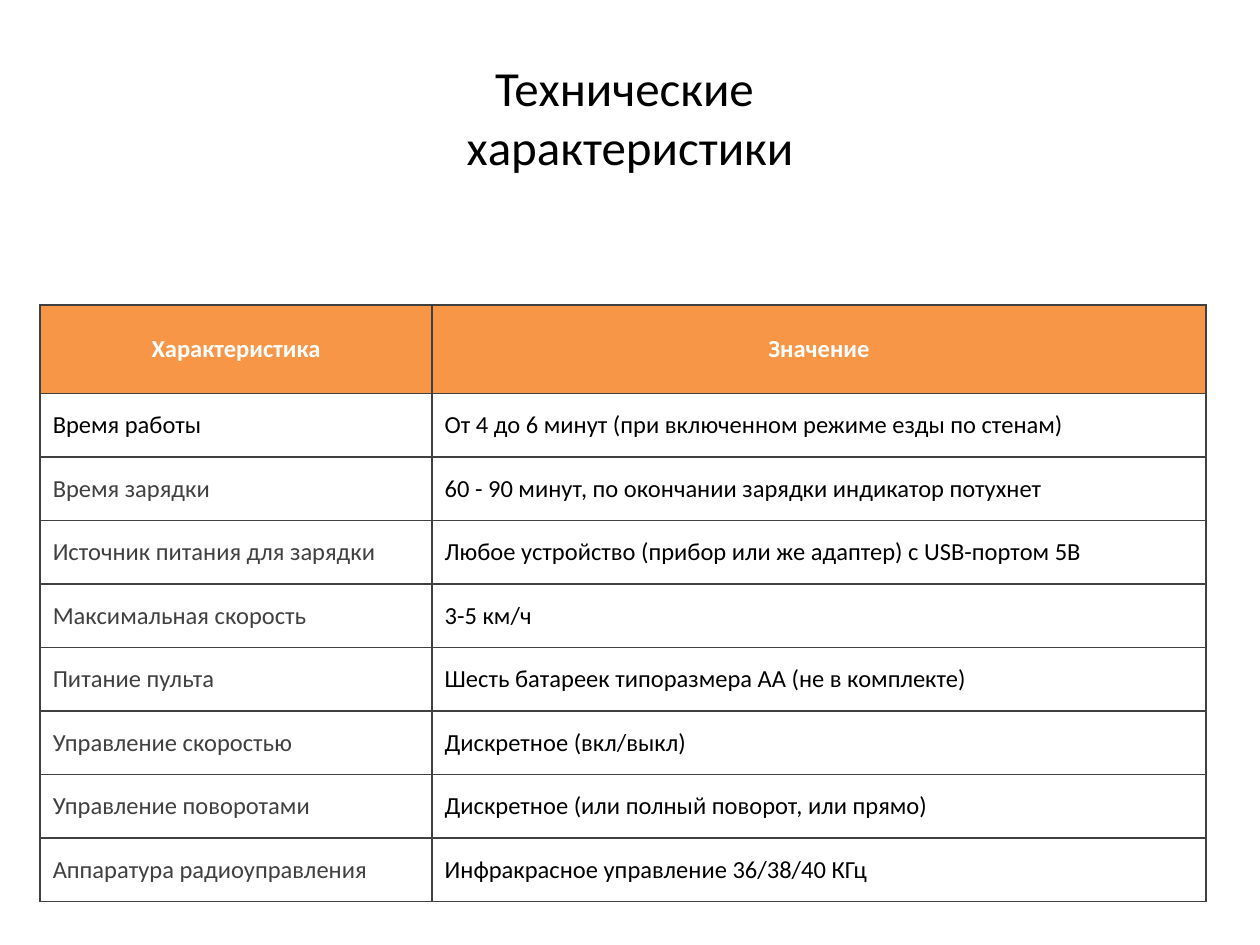
from dataclasses import dataclass

import lxml.etree
import pptx
import pptx.dml.color
import pptx.enum.text
import pptx.oxml.ns
import pptx.util

Cm = pptx.util.Cm
Pt = pptx.util.Pt
RGBColor = pptx.dml.color.RGBColor
PP_ALIGN = pptx.enum.text.PP_ALIGN
MSO_ANCHOR = pptx.enum.text.MSO_ANCHOR
qn = pptx.oxml.ns.qn

BLACK = RGBColor(0x00, 0x00, 0x00)
WHITE = RGBColor(0xFF, 0xFF, 0xFF)
GRAY = RGBColor(0x40, 0x40, 0x40)
ORANGE = RGBColor(0xF7, 0x96, 0x46)
FONT_NAME = "Calibri"
COLUMN_WIDTHS = (Cm(7.9), Cm(15.6))
HEADER_HEIGHT = Cm(1.78)
ROW_HEIGHT = Cm(1.28)


@dataclass(frozen=True)
class Specification:
    name: str
    value: str
    name_color: RGBColor = GRAY


@dataclass(frozen=True)
class CellStyle:
    fill: RGBColor
    color: RGBColor
    bold: bool = False
    alignment: PP_ALIGN = PP_ALIGN.LEFT


SPECIFICATIONS = (
    Specification("Время работы", "От 4 до 6 минут (при включенном режиме езды по стенам)", BLACK),
    Specification("Время зарядки", "60 - 90 минут, по окончании зарядки индикатор потухнет"),
    Specification("Источник питания для зарядки", "Любое устройство (прибор или же адаптер) с USB-портом 5В"),
    Specification("Максимальная скорость", "3-5 км/ч"),
    Specification("Питание пульта", "Шесть батареек типоразмера АА (не в комплекте)"),
    Specification("Управление скоростью", "Дискретное (вкл/выкл)"),
    Specification("Управление поворотами", "Дискретное (или полный поворот, или прямо)"),
    Specification("Аппаратура радиоуправления", "Инфракрасное управление 36/38/40 КГц"),
)
HEADER_STYLE = CellStyle(ORANGE, WHITE, True, PP_ALIGN.CENTER)


def style_paragraph(paragraph, size: int, style: CellStyle) -> None:
    paragraph.alignment = style.alignment
    font = paragraph.font
    font.name = FONT_NAME
    font.size = Pt(size)
    font.bold = style.bold
    font.color.rgb = style.color


def add_borders(cell) -> None:
    properties = cell._tc.get_or_add_tcPr()
    for index, side in enumerate(("lnL", "lnR", "lnT", "lnB")):
        line = lxml.etree.Element(qn(f"a:{side}"), w=str(Pt(1)))
        fill = lxml.etree.SubElement(line, qn("a:solidFill"))
        lxml.etree.SubElement(fill, qn("a:srgbClr"), val=str(GRAY))
        properties.insert(index, line)


def fill_cell(cell, text: str, style: CellStyle) -> None:
    cell.text = text
    cell.vertical_anchor = MSO_ANCHOR.MIDDLE
    cell.fill.solid()
    cell.fill.fore_color.rgb = style.fill
    style_paragraph(cell.text_frame.paragraphs[0], 14, style)
    add_borders(cell)


def add_title(slide) -> None:
    shape = slide.shapes.add_textbox(Cm(1.27), Cm(0.76), Cm(22.86), Cm(3.18))
    frame = shape.text_frame
    frame.word_wrap = True
    frame.vertical_anchor = MSO_ANCHOR.MIDDLE
    frame.text = "Технические \vхарактеристики"
    style_paragraph(frame.paragraphs[0], 28, CellStyle(WHITE, BLACK, alignment=PP_ALIGN.CENTER))


def add_specification_table(slide) -> None:
    count = len(SPECIFICATIONS)
    table = slide.shapes.add_table(
        count + 1, 2, Cm(0.81), Cm(6.15), sum(COLUMN_WIDTHS), HEADER_HEIGHT + count * ROW_HEIGHT
    ).table
    for column, width in zip(table.columns, COLUMN_WIDTHS):
        column.width = width
    for row in table.rows:
        row.height = ROW_HEIGHT
    table.rows[0].height = HEADER_HEIGHT
    for index, text in enumerate(("Характеристика", "Значение")):
        fill_cell(table.cell(0, index), text, HEADER_STYLE)
    for index, specification in enumerate(SPECIFICATIONS, start=1):
        fill_cell(table.cell(index, 0), specification.name, CellStyle(WHITE, specification.name_color))
        fill_cell(table.cell(index, 1), specification.value, CellStyle(WHITE, BLACK))


def main() -> None:
    """Build the technical specifications slide."""
    presentation = pptx.Presentation()
    presentation.slide_width = Cm(25.4)
    presentation.slide_height = Cm(19.05)
    slide = presentation.slides.add_slide(presentation.slide_layouts[6])
    add_title(slide)
    add_specification_table(slide)
    presentation.save("out.pptx")


if __name__ == "__main__":
    main()
